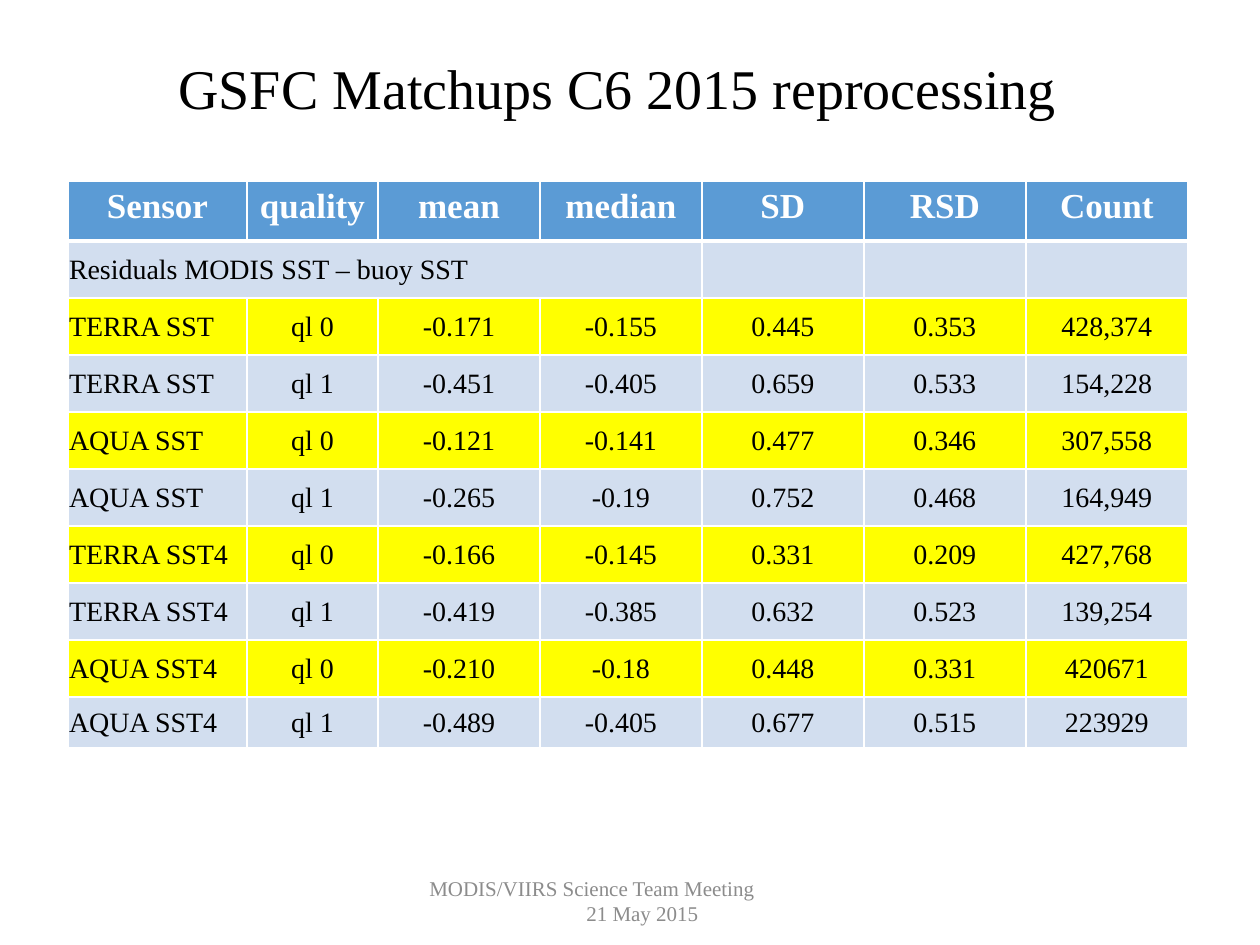
from lxml import etree
from pptx import Presentation
from pptx.dml.color import RGBColor
from pptx.enum.text import MSO_ANCHOR, PP_ALIGN
from pptx.oxml.ns import qn
from pptx.util import Pt

EMU_PER_PX = 914400 / 126
LEFT, CENTER = PP_ALIGN.LEFT, PP_ALIGN.CENTER
TOP, MIDDLE = MSO_ANCHOR.TOP, MSO_ANCHOR.MIDDLE

BLACK, WHITE, GREY = "000000", "FFFFFF", "8C8C8C"
HEADER_BLUE, PALE_BLUE, YELLOW = "5B9BD5", "D2DEEF", "FFFF00"

HEADINGS = ["Sensor", "quality", "mean", "median", "SD", "RSD", "Count"]
SECTION = "Residuals MODIS SST – buoy SST"
SECTION_SPAN = 4
MATCHUPS = [
    ["TERRA SST", "ql 0", "-0.171", "-0.155", "0.445", "0.353", "428,374"],
    ["TERRA SST", "ql 1", "-0.451", "-0.405", "0.659", "0.533", "154,228"],
    ["AQUA SST", "ql 0", "-0.121", "-0.141", "0.477", "0.346", "307,558"],
    ["AQUA SST", "ql 1", "-0.265", "-0.19", "0.752", "0.468", "164,949"],
    ["TERRA SST4", "ql 0", "-0.166", "-0.145", "0.331", "0.209", "427,768"],
    ["TERRA SST4", "ql 1", "-0.419", "-0.385", "0.632", "0.523", "139,254"],
    ["AQUA SST4", "ql 0", "-0.210", "-0.18", "0.448", "0.331", "420671"],
    ["AQUA SST4", "ql 1", "-0.489", "-0.405", "0.677", "0.515", "223929"],
]
COLUMN_WIDTHS = [179, 131] + [162] * 5
ROW_HEIGHTS = [60] + [57] * 8 + [51]


def px(length):
    return round(length * EMU_PER_PX)


def color(hex_code):
    return RGBColor.from_string(hex_code)


class SlideBuilder:
    font_name = "Times New Roman"

    def __init__(self, slide):
        self.slide = slide

    def style(self, paragraph, size, hex_code, align=LEFT, bold=False):
        paragraph.alignment = align
        font = paragraph.font
        font.name, font.size, font.bold = self.font_name, Pt(size), bold
        font.color.rgb = color(hex_code)

    def text(self, left, top, width, height, words, size, hex_code, hanging=0):
        box = self.slide.shapes.add_textbox(px(left), px(top), px(width), px(height))
        frame = box.text_frame
        frame.word_wrap = True
        frame.vertical_anchor = MIDDLE
        paragraph = frame.paragraphs[0]
        paragraph.text = words
        if hanging:
            properties = paragraph._p.get_or_add_pPr()
            properties.set("marL", str(px(hanging)))
            properties.set("indent", str(-px(hanging)))
        self.style(paragraph, size, hex_code)
        return paragraph

    def table(self, left, top, widths, heights):
        frame = self.slide.shapes.add_table(
            len(heights), len(widths), px(left), px(top), px(sum(widths)), px(sum(heights)))
        table = frame.table
        table.horz_banding = False
        for column, width in zip(table.columns, widths):
            column.width = px(width)
        for row, height in zip(table.rows, heights):
            row.height = px(height)
        return table

    def borders(self, cell, top=1, bottom=1):
        properties = cell._tc.get_or_add_tcPr()
        for side, width in (("L", 1), ("R", 1), ("T", top), ("B", bottom)):
            line = etree.SubElement(properties, qn(f"a:ln{side}"), w=str(Pt(width)))
            fill = etree.SubElement(line, qn("a:solidFill"))
            etree.SubElement(fill, qn("a:srgbClr"), val=WHITE)

    def cell(self, cell, words, size, hex_code, fill, align, bold=False):
        cell.fill.solid()
        cell.fill.fore_color.rgb = color(fill)
        cell.text = words
        self.style(cell.text_frame.paragraphs[0], size, hex_code, align, bold)

    def header_cell(self, cell, words):
        self.borders(cell, bottom=3)
        cell.vertical_anchor = TOP
        self.cell(cell, words, 20, WHITE, HEADER_BLUE, CENTER, bold=True)

    def body_cell(self, cell, words, fill, align, top_border=1):
        self.borders(cell, top=top_border)
        cell.vertical_anchor = MIDDLE
        cell.margin_left = cell.margin_right = cell.margin_top = px(1)
        cell.margin_bottom = 0
        self.cell(cell, words, 16, BLACK, fill, align)


def main():
    presentation = Presentation()
    presentation.slide_width, presentation.slide_height = px(1260), px(945)
    blank = presentation.slide_layouts[6]
    builder = SlideBuilder(presentation.slides.add_slide(blank))

    # Title
    title = builder.text(166, 0, 928, 183, "GSFC Matchups C6 2015 reprocessing", 32, BLACK)
    title.line_spacing = 0.9

    # Table header
    table = builder.table(68, 181, COLUMN_WIDTHS, ROW_HEIGHTS)
    for column, heading in enumerate(HEADINGS):
        builder.header_cell(table.cell(0, column), heading)

    # Section row, its label merged over the first columns
    for column in range(len(HEADINGS)):
        label = SECTION if column == 0 else ""
        builder.body_cell(table.cell(1, column), label, PALE_BLUE, LEFT, top_border=3)
    table.cell(1, 0).merge(table.cell(1, SECTION_SPAN - 1))

    # Matchup rows, best quality highlighted
    for row, matchup in enumerate(MATCHUPS, start=2):
        fill = YELLOW if matchup[1] == "ql 0" else PALE_BLUE
        for column, value in enumerate(matchup):
            align = LEFT if column == 0 else CENTER
            builder.body_cell(table.cell(row, column), value, fill, align)

    # Footer, its date on an indented second line
    builder.text(417, 876, 426, 50, "MODIS/VIIRS Science Team Meeting\v21 May 2015",
                 12, GREY, hanging=157)

    presentation.save("out.pptx")


if __name__ == "__main__":
    main()
